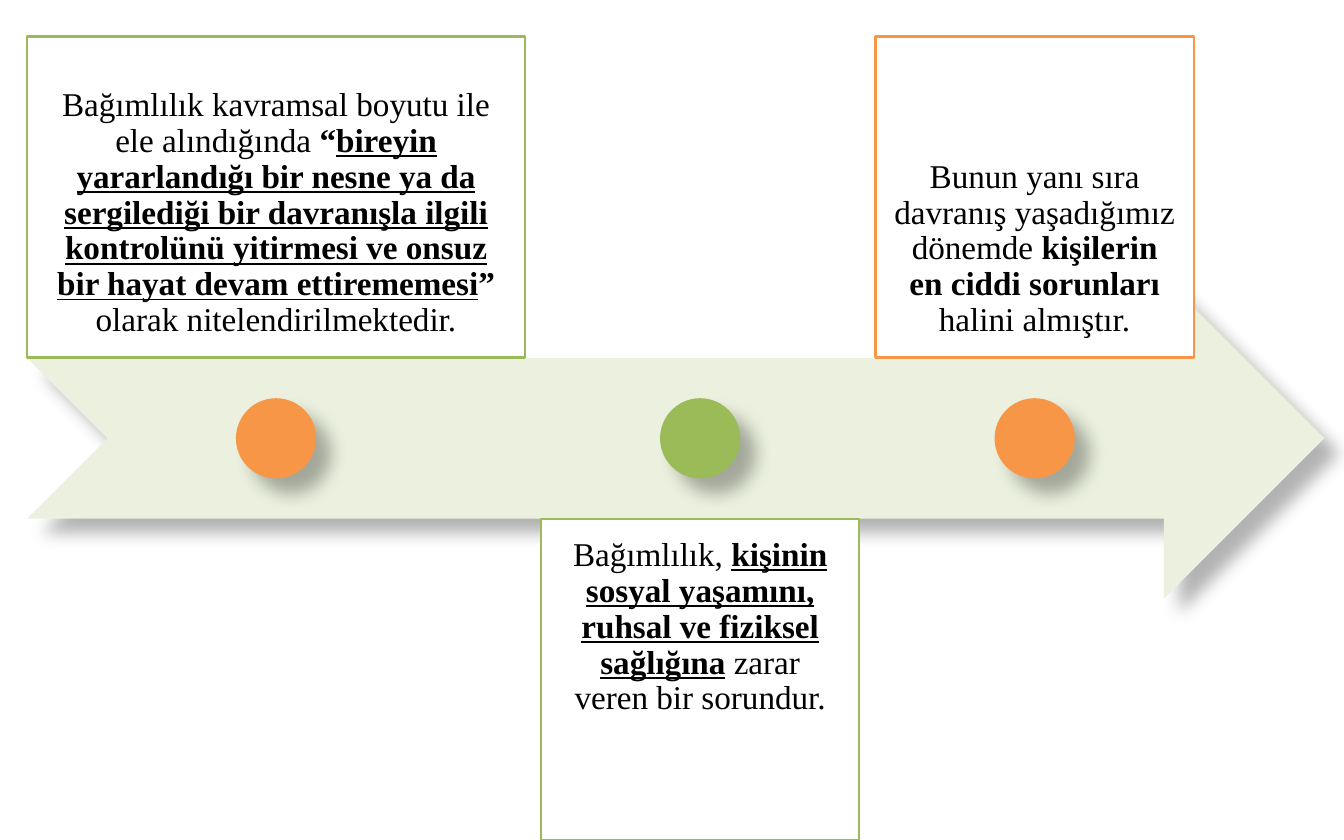
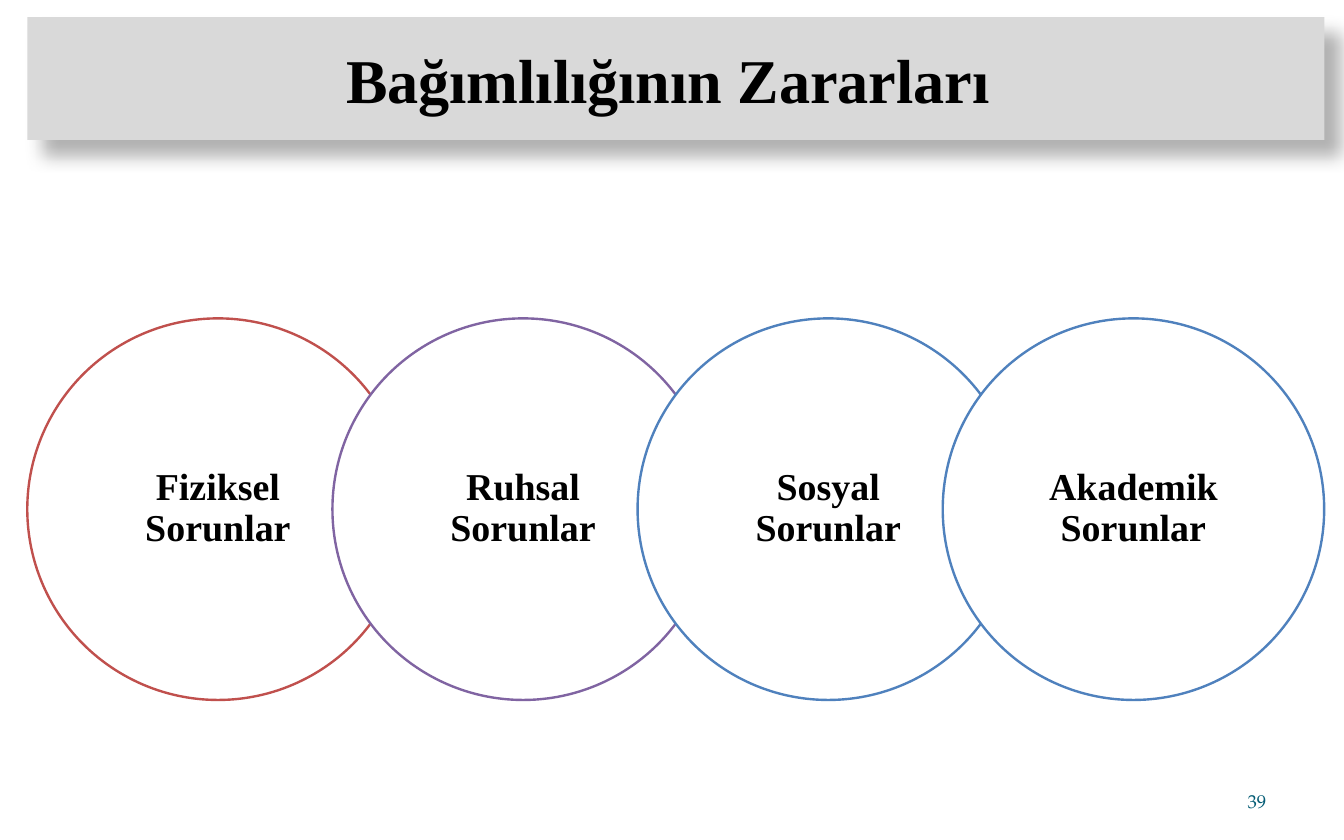
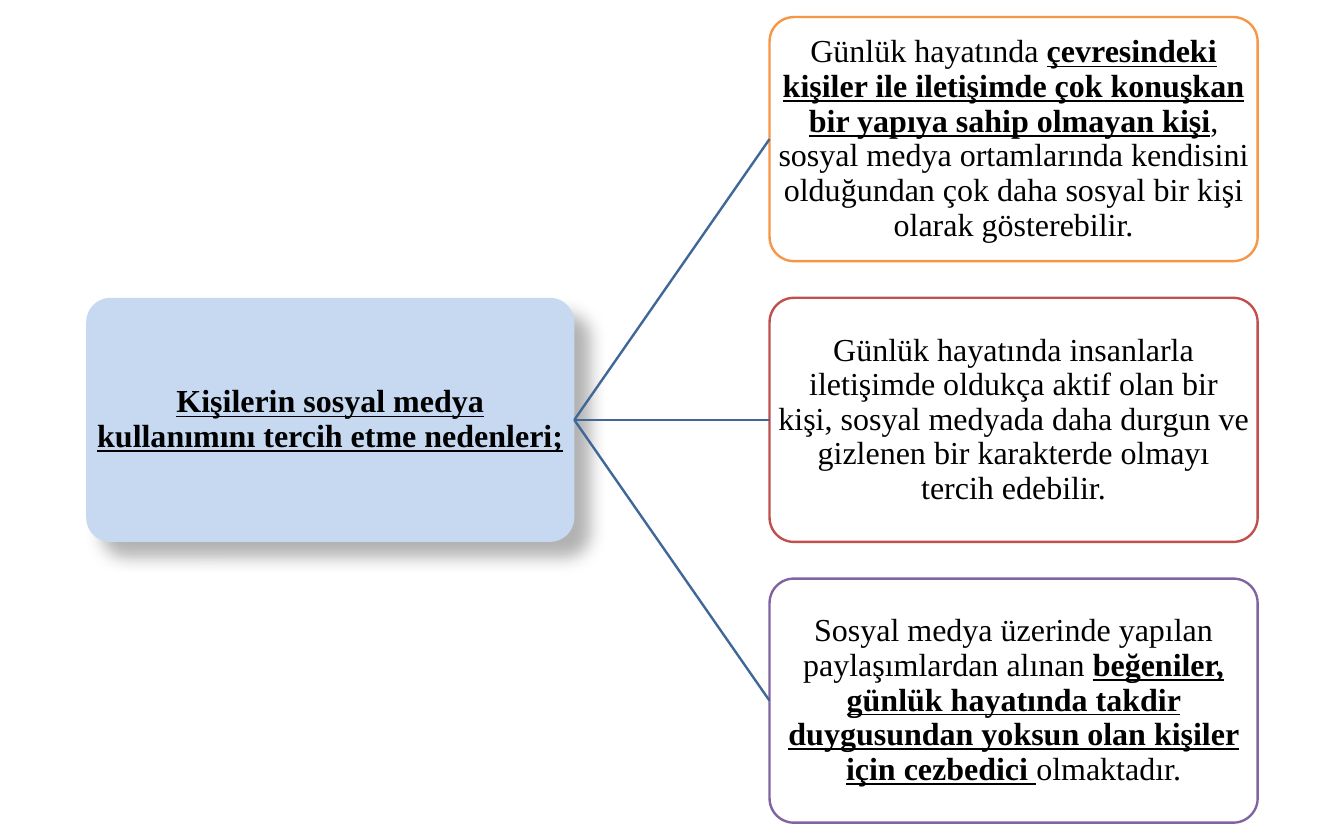
from lxml.etree import SubElement
from pptx import Presentation
from pptx.dml.color import RGBColor
from pptx.enum.shapes import MSO_CONNECTOR, MSO_SHAPE
from pptx.enum.text import MSO_ANCHOR, MSO_AUTO_SIZE, PP_ALIGN
from pptx.oxml.ns import qn
from pptx.util import Inches, Pt

# Shared look
WIDE, HIGH = 15.75, 9.84
EDGE = 0.32
SPAN = 15.2
SERIF = "Times New Roman"
BLACK = RGBColor(0x00, 0x00, 0x00)
WHITE = RGBColor(0xFF, 0xFF, 0xFF)
GREY = RGBColor(0xD9, 0xD9, 0xD9)
PALE = RGBColor(0xEB, 0xF1, 0xDE)
SKY = RGBColor(0xC6, 0xD9, 0xF1)
GREEN = RGBColor(0x9B, 0xBB, 0x59)
ORANGE = RGBColor(0xF7, 0x96, 0x46)
RED = RGBColor(0xC0, 0x50, 0x4D)
PURPLE = RGBColor(0x80, 0x64, 0xA2)
BLUE = RGBColor(0x4F, 0x81, 0xBD)
STEEL = RGBColor(0x3F, 0x67, 0x97)
TEAL = RGBColor(0x04, 0x5C, 0x75)

# Content: runs are (text, marks), where b is bold and u is underlined
STEPS = [
    {"width": 5.83, "up": True, "line": GREEN, "dot": ORANGE, "runs": [
        ("Bağımlılık kavramsal boyutu ile ele alındığında ", ""),
        ("“", "b"),
        ("bireyin yararlandığı bir nesne ya da sergilediği bir davranışla "
         "ilgili kontrolünü yitirmesi ve onsuz bir hayat devam "
         "ettirememesi", "bu"),
        ("”", "b"),
        (" ", "bu"),
        ("olarak nitelendirilmektedir.", "")]},
    {"width": 3.73, "up": False, "line": GREEN, "dot": GREEN, "runs": [
        ("Bağımlılık, ", ""),
        ("kişinin sosyal yaşamını, ruhsal ve fiziksel sağlığına", "bu"),
        (" ", "b"),
        ("zarar veren bir sorundur.", "")]},
    {"width": 3.73, "up": True, "line": ORANGE, "dot": ORANGE, "runs": [
        ("Bunun yanı sıra davranış yaşadığımız dönemde ", ""),
        ("kişilerin en ciddi sorunları ", "b"),
        ("halini almıştır.", "")]},
]
TITLE = "Bağımlılığının Zararları "
HARMS = [
    ("Fiziksel Sorunlar", RED),
    ("Ruhsal Sorunlar", PURPLE),
    ("Sosyal Sorunlar", BLUE),
    ("Akademik Sorunlar", BLUE),
]
ROOT = "Kişilerin sosyal medya kullanımını tercih etme nedenleri;"
CAUSES = [
    (ORANGE, [
        ("Günlük hayatında ", ""),
        ("çevresindeki kişiler ile iletişimde çok konuşkan bir yapıya sahip "
         "olmayan kişi", "bu"),
        (", sosyal medya ortamlarında kendisini olduğundan çok daha sosyal "
         "bir kişi olarak gösterebilir.", "")]),
    (RED, [
        ("Günlük hayatında insanlarla iletişimde oldukça aktif olan bir "
         "kişi, sosyal medyada daha durgun ve gizlenen bir karakterde "
         "olmayı tercih edebilir.", "")]),
    (PURPLE, [
        ("Sosyal medya üzerinde yapılan paylaşımlardan alınan ", ""),
        ("beğeniler, günlük hayatında takdir duygusundan yoksun olan "
         "kişiler için cezbedici ", "bu"),
        ("olmaktadır.", "")]),
]


def put(item, values):
    for name, value in values.items():
        setattr(item, name, value)


def place(shape, at):
    names = ("left", "top", "width", "height")
    put(shape, dict(zip(names, map(Inches, at))))


def paint(shape, fill, line=None, shade=False):
    """Set fill, outline and, when asked, the soft shadow."""
    shape.fill.solid()
    shape.fill.fore_color.rgb = fill
    if line is None:
        shape.line.fill.background()
    else:
        shape.line.color.rgb = line
        shape.line.width = Pt(2)
    shape.shadow.inherit = False
    if shade:
        glow = SubElement(
            shape.element.spPr.find(qn("a:effectLst")), qn("a:outerShdw"),
            blurRad=str(Pt(15)), dist=str(Pt(18)), dir="2700000",
            algn="tl", rotWithShape="0")
        tint = SubElement(glow, qn("a:srgbClr"), val="000000")
        SubElement(tint, qn("a:alpha"), val="30000")


def write(shape, runs, size, pad, anchor=MSO_ANCHOR.MIDDLE,
          align=PP_ALIGN.CENTER, gap=0.9, face=SERIF, ink=BLACK):
    """Fill a shape with one paragraph; pad is (sides, top and bottom)."""
    side, rim = map(Inches, pad)
    frame = shape.text_frame
    put(frame, {"word_wrap": True, "auto_size": MSO_AUTO_SIZE.NONE,
                "vertical_anchor": anchor,
                "margin_left": side, "margin_right": side,
                "margin_top": rim, "margin_bottom": rim})
    para = frame.paragraphs[0]
    put(para, {"alignment": align, "line_spacing": gap})
    for text, marks in runs:
        run = para.add_run()
        run.text = text
        put(run.font, {"name": face, "size": Pt(size), "bold": "b" in marks,
                       "underline": "u" in marks})
        run.font.color.rgb = ink


def draw(slide, kind, at, fill, line=None, shade=False):
    shape = slide.shapes.add_shape(kind, *map(Inches, at))
    paint(shape, fill, line, shade)
    return shape


def show_steps(slide):
    """Arrow with text boxes above and below it."""
    tall, top, gap = 3.76, 0.43, 0.19
    dot = tall / 4
    mid = (top + HIGH) / 2
    draw(slide, MSO_SHAPE.NOTCHED_RIGHT_ARROW,
         (EDGE, mid - tall / 2, SPAN, tall), PALE, shade=True)
    left = EDGE
    for step in STEPS:
        wide, up = step["width"], step["up"]
        box = draw(slide, MSO_SHAPE.RECTANGLE,
                   (left, top if up else HIGH - tall, wide, tall),
                   WHITE, step["line"])
        write(box, step["runs"], 28, (0.22, 0.22),
              MSO_ANCHOR.BOTTOM if up else MSO_ANCHOR.TOP)
        draw(slide, MSO_SHAPE.OVAL,
             (left + (wide - dot) / 2, mid - dot / 2, dot, dot),
             step["dot"], shade=True)
        left += wide + gap


def show_harms(slide):
    """Title band, overlapping circles and page number."""
    title = slide.shapes.title
    place(title, (EDGE, 0.2, SPAN, 1.44))
    paint(title, GREY, shade=True)
    write(title, [(TITLE, "b")], 52.5, (0.12, 0.06), gap=1.0)

    size = 4.47
    for col, (text, line) in enumerate(HARMS):
        ring = draw(slide, MSO_SHAPE.OVAL,
                    (EDGE + col * size * 0.8, 3.73, size, size), WHITE, line)
        write(ring, [(text, "b")], 32, (0.25, 0.04))

    page = slide.shapes.add_textbox(*map(Inches, (11.29, 9.12, 3.67, 0.52)))
    write(page, [("39", "")], 15.8, (0.12, 0.06), align=PP_ALIGN.RIGHT,
          gap=1.0, face="TeX Gyre Pagella", ink=TEAL)


def show_causes(slide):
    """Tree: one root on the left, three causes on the right."""
    wide, tall, left, top = 5.72, 2.86, 1.01, 0.2
    pitch = tall * 1.15

    def node(col, row, runs, *look):
        at = (left + col * wide * 1.4, top + row * pitch, wide, tall)
        card = draw(slide, MSO_SHAPE.ROUNDED_RECTANGLE, at, *look)
        card.adjustments[0] = 0.1
        write(card, runs, 27, (0.02, 0.02))
        return card

    root = node(0, 1, [(ROOT, "bu")], SKY, None, True)
    for row, (line, runs) in enumerate(CAUSES):
        card = node(1, row, runs, WHITE, line)
        link = slide.shapes.add_connector(MSO_CONNECTOR.STRAIGHT, 0, 0, 0, 0)
        link.begin_connect(root, 3)
        link.end_connect(card, 1)
        link.line.color.rgb = STEEL
        link.line.width = Pt(2)
        SubElement(link.element.spPr, qn("a:effectLst"))


def main():
    deck = Presentation()
    put(deck, {"slide_width": Inches(WIDE), "slide_height": Inches(HIGH)})
    bare, titled = deck.slide_layouts[6], deck.slide_layouts[5]
    for layout, show in ((bare, show_steps), (titled, show_harms),
                         (bare, show_causes)):
        show(deck.slides.add_slide(layout))
    deck.save("out.pptx")


if __name__ == "__main__":
    main()
